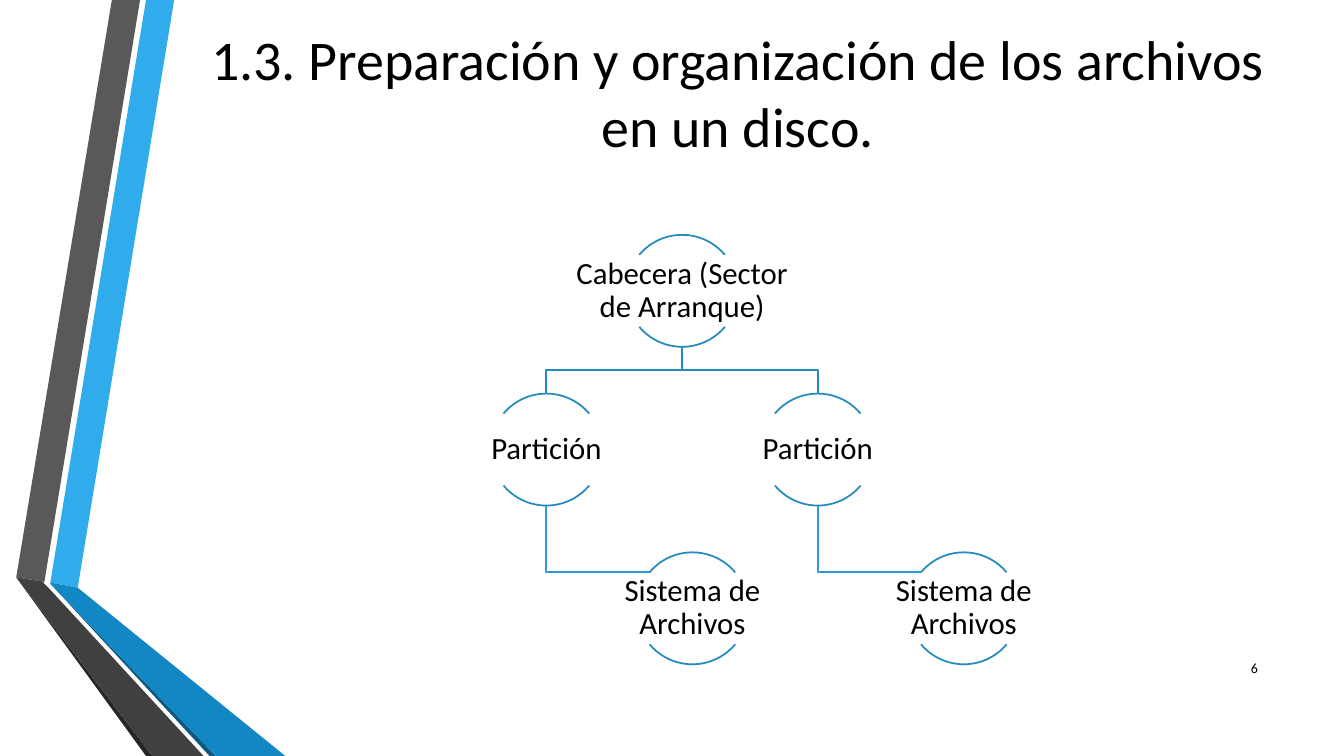
import collections

import pptx
import pptx.dml.color
import pptx.enum.shapes
import pptx.enum.text
import pptx.util

Cm = pptx.util.Cm
RGBColor = pptx.dml.color.RGBColor
ALIGN = pptx.enum.text.PP_ALIGN
Box = collections.namedtuple("Box", "left top width height")

BLACK = RGBColor(0x00, 0x00, 0x00)
SKY = RGBColor(0x30, 0xAC, 0xEC)
OCEAN = RGBColor(0x12, 0x87, 0xC3)
NAVY = RGBColor(0x0C, 0x5A, 0x82)
GREY = RGBColor(0x59, 0x59, 0x59)
DARK_GREY = RGBColor(0x40, 0x40, 0x40)
CHARCOAL = RGBColor(0x26, 0x26, 0x26)
ARC_BLUE = RGBColor(0x26, 0x8A, 0xBD)
LINK_BLUE = RGBColor(0x2C, 0x9C, 0xD6)

FONT = "Calibri"
SLIDE = Box(0, 0, 33.87, 19.05)
TITLE = Box(4.67, -0.13, 27.84, 4.88)
TREE = Box(10.95, 5.92, 16.13, 10.82)
NUMBER = Box(30.43, 16.33, 1.52, 1.02)

# Ribbon outlines in cm from the top left corner of their box
RIBBONS = [
    (SKY, [(1.27, 14.68), (1.96, 14.81), (4.39, 0), (3.68, 0)]),
    (GREY, [(3.53, 0), (2.82, 0), (0.41, 14.55), (1.12, 14.66)]),
    (CHARCOAL, [(0.41, 14.55), (3.68, 19.05), (3.84, 19.05)]),
    (NAVY, [(1.27, 14.71), (5.28, 19.05), (5.44, 19.05)]),
    (OCEAN, [(1.27, 14.71), (5.44, 19.05), (7.19, 19.05), (1.96, 14.81),
             (1.27, 14.68)]),
    (DARK_GREY, [(5.13, 19.05), (1.22, 14.81), (1.09, 14.68), (1.12, 14.66),
                 (0.41, 14.55), (3.84, 19.05)]),
]

# Tree geometry in cm
CIRCLE = 2.82
LEVEL_STEP = 4.0
BRANCH_OFFSET = 3.42
LEAF_OFFSET = 3.68
ARC_END = (1.08, 0.5)  # left of the centre, below the circle's top
LABEL_SIZE = (5.64, 1.8)
ARCS = [(132, 192), (24, 84)]  # upper and lower arc


def set_values(target, values):
    for name, value in values.items():
        setattr(target, name, value)


def place(shape, box):
    set_values(shape, {name: Cm(value) for name, value in box._asdict().items()})


def write(shape, text, size, align, margins=None, line_spacing=None):
    frame = shape.text_frame
    set_values(frame, {
        "word_wrap": True,
        "auto_size": pptx.enum.text.MSO_AUTO_SIZE.NONE,
        "vertical_anchor": pptx.enum.text.MSO_ANCHOR.MIDDLE,
    })
    if margins is not None:
        for side in ("left", "top", "right", "bottom"):
            setattr(frame, f"margin_{side}", Cm(margins))
    para = frame.paragraphs[0]
    set_values(para, {"alignment": align, "line_spacing": line_spacing})
    span = para.add_run()
    span.text = text
    set_values(span.font, {"name": FONT, "size": pptx.util.Pt(size)})
    span.font.color.rgb = BLACK


def add_text(page, box, *args, **formats):
    shape = page.shapes.add_textbox(*map(Cm, box))
    write(shape, *args, **formats)


def draw_outline(page, points, close):
    corners = [(Cm(x), Cm(y)) for x, y in points]
    builder = page.shapes.build_freeform(*corners[0])
    builder.add_line_segments(corners[1:], close=close)
    shape = builder.convert_to_shape()
    shape.shadow.inherit = False
    return shape


def stroke(shape, color):
    shape.fill.background()
    shape.line.color.rgb = color
    shape.line.width = pptx.util.Pt(1.25)


def add_ribbons(page, box):
    for color, points in RIBBONS:
        shape = draw_outline(
            page, [(box.left + x, box.top + y) for x, y in points], close=True)
        shape.fill.solid()
        shape.fill.fore_color.rgb = color
        shape.line.fill.background()


def add_title(page, box):
    title = page.shapes.title
    place(title, box)
    write(title, "1.3. Preparación y organización de los archivos en un disco.",
          40, ALIGN.CENTER)


def add_node(page, center, top, text):
    """Draw a label between the upper and lower arc of a circle."""
    for angles in ARCS:
        arc = page.shapes.add_shape(
            pptx.enum.shapes.MSO_SHAPE.ARC,
            Cm(center - CIRCLE / 2), Cm(top), Cm(CIRCLE), Cm(CIRCLE))
        arc.shadow.inherit = False
        arc.adjustments[0], arc.adjustments[1] = angles
        stroke(arc, ARC_BLUE)
    width, height = LABEL_SIZE
    label_box = Box(center - width / 2, top + (CIRCLE - height) / 2, width, height)
    add_text(page, label_box, text, 22, ALIGN.CENTER,
             margins=0.04, line_spacing=0.9)


def add_tree(page, box):
    root = box.left + LABEL_SIZE[0] / 2 + BRANCH_OFFSET
    root_top, branch_top, leaf_top = (
        box.top + level * LEVEL_STEP for level in range(3))
    root_bottom = root_top + CIRCLE
    middle = (root_bottom + branch_top) / 2
    add_node(page, root, root_top, "Cabecera (Sector de Arranque)")
    for branch in (root - BRANCH_OFFSET, root + BRANCH_OFFSET):
        leaf = branch + LEAF_OFFSET
        leaf_entry = leaf_top + ARC_END[1]
        branch_link = [(root, root_bottom), (root, middle),
                       (branch, middle), (branch, branch_top)]
        leaf_link = [(branch, branch_top + CIRCLE), (branch, leaf_entry),
                     (leaf - ARC_END[0], leaf_entry)]
        for points, color in ((branch_link, ARC_BLUE), (leaf_link, LINK_BLUE)):
            stroke(draw_outline(page, points, close=False), color)
        add_node(page, branch, branch_top, "Partición")
        add_node(page, leaf, leaf_top, "Sistema de Archivos")


def main():
    deck = pptx.Presentation()
    deck.slide_width, deck.slide_height = Cm(SLIDE.width), Cm(SLIDE.height)
    page = deck.slides.add_slide(deck.slide_layouts.get_by_name("Title Only"))
    add_ribbons(page, SLIDE)
    add_title(page, TITLE)
    add_tree(page, TREE)
    add_text(page, NUMBER, "6", 10, ALIGN.RIGHT)
    deck.save("out.pptx")


if __name__ == "__main__":
    main()
